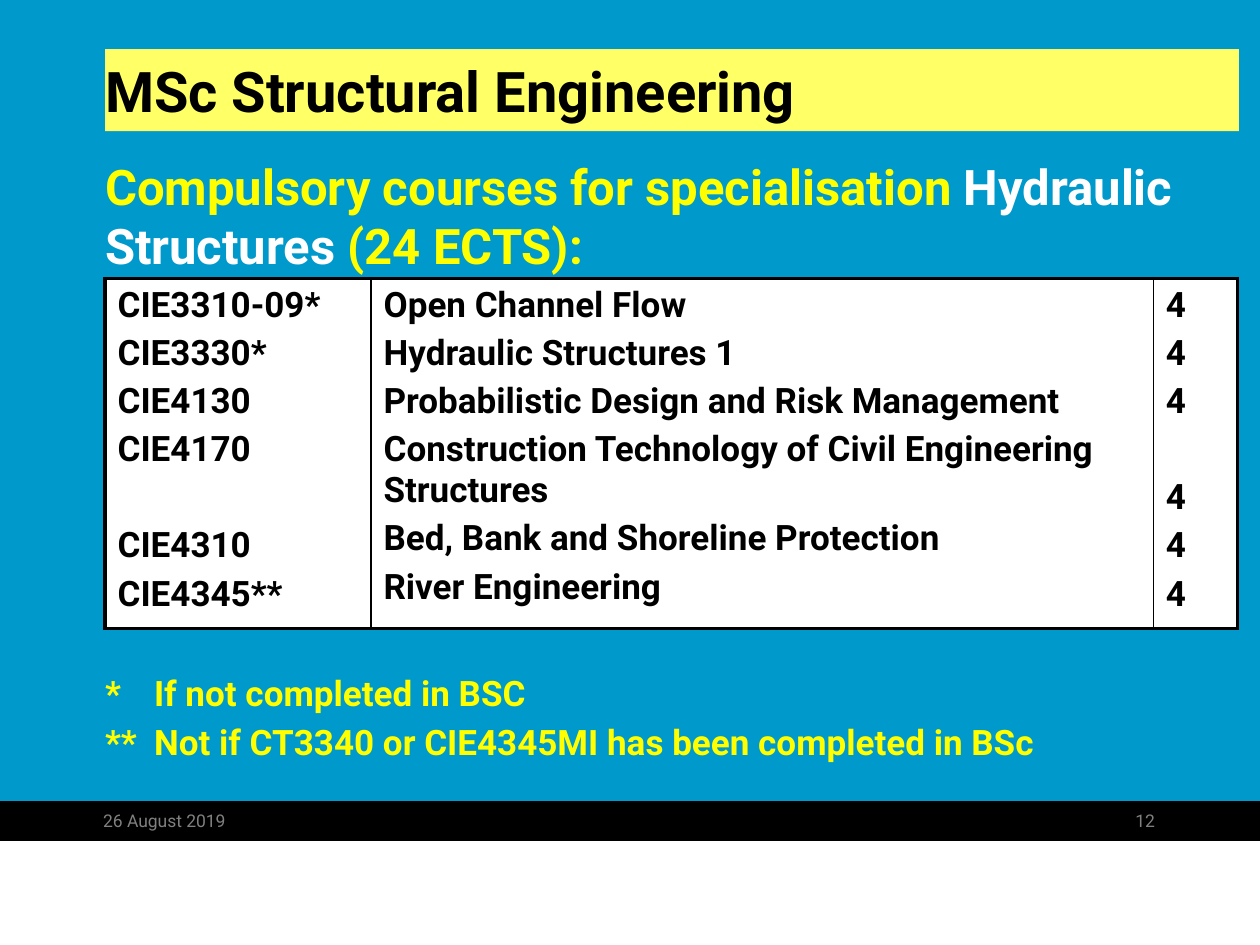
from dataclasses import dataclass

from lxml.etree import SubElement
from pptx import Presentation
from pptx.dml.color import RGBColor as RGB
from pptx.enum.shapes import MSO_SHAPE as Shape
from pptx.enum.text import MSO_ANCHOR as Anchor, MSO_AUTO_SIZE as AutoSize, PP_ALIGN as Align
from pptx.oxml.ns import qn
from pptx.util import Pt


@dataclass(frozen=True)
class Theme:
    font: str = "Roboto"
    background: str = "0099CC"
    banner: str = "FFFF66"
    accent: str = "FFFF00"
    dark: str = "000000"
    light: str = "FFFFFF"
    muted: str = "808080"
    title: int = 32
    heading: int = 28
    text: int = 20
    footer: int = 10


THEME = Theme()
LINE_GAP = 4
SKIPPED_LINE = 27.5
CODES = [("CIE3310-09*", 0), ("CIE3330*", 0), ("CIE4130", 0), ("CIE4170", 0),
         ("CIE4310", 1), ("CIE4345**", 0)]
COURSES = [("Open Channel Flow", 0), ("Hydraulic Structures 1", 0),
           ("Probabilistic Design and Risk Management", 0),
           ("Construction Technology of Civil Engineering Structures", 0),
           ("Bed, Bank and Shoreline Protection", 0), ("River Engineering", 0)]
CREDITS = [("4", 0), ("4", 0), ("4", 0), ("4", 1), ("4", 0), ("4", 0)]
COLUMNS = [(152, CODES), (447, COURSES), (48, CREDITS)]


def apply(target, values):
    for name, value in values.items():
        setattr(target, name, value)


def paint(fill, color):
    fill.solid()
    fill.fore_color.rgb = RGB.from_string(color)


def place(item, left, top, width, height):
    apply(item, {"left": Pt(left), "top": Pt(top), "width": Pt(width), "height": Pt(height)})


def format_frame(frame, anchor):
    apply(frame, {"margin_left": 0, "margin_right": 0, "margin_top": Pt(3.6),
                  "margin_bottom": Pt(3.6), "word_wrap": True,
                  "auto_size": AutoSize.NONE, "vertical_anchor": anchor})


def write(paragraph, pieces, size, bold=True, before=0, align=Align.LEFT):
    apply(paragraph, {"alignment": align, "space_before": Pt(before)})
    for words, color in pieces:
        run = paragraph.add_run()
        run.text = words
        apply(run.font, {"name": THEME.font, "size": Pt(size), "bold": bold})
        run.font.color.rgb = RGB.from_string(color)


def set_indent(paragraph, hanging=0):
    properties = paragraph._p.get_or_add_pPr()
    properties.set("marL", str(Pt(hanging)))
    properties.set("indent", str(-Pt(hanging)))
    SubElement(properties, qn("a:buNone"))


def add_strip(slide, top, height, color, outlined=False):
    strip = slide.shapes.add_shape(Shape.RECTANGLE, 0, Pt(top), Pt(720), Pt(height))
    strip.shadow.inherit = False
    paint(strip.fill, color)
    if outlined:
        paint(strip.line.fill, color)
        strip.line.width = Pt(0.75)
    else:
        strip.line.fill.background()


def add_footer_text(slide, left, words, align):
    box = slide.shapes.add_textbox(Pt(left), Pt(459.5), Pt(150), Pt(20))
    format_frame(box.text_frame, Anchor.TOP)
    write(box.text_frame.paragraphs[0], [(words, THEME.muted)], THEME.footer, False, align=align)


def fill_title(title):
    place(title, 60, 28, 648, 47)
    paint(title.fill, THEME.banner)
    format_frame(title.text_frame, Anchor.MIDDLE)
    write(title.text_frame.paragraphs[0], [("MSc Structural Engineering", THEME.dark)], THEME.title)


def fill_body(body):
    place(body, 60, 86, 644, 385)
    frame = body.text_frame
    format_frame(frame, Anchor.TOP)
    heading = frame.paragraphs[0]
    set_indent(heading)
    write(heading, [("Compulsory courses for specialisation ", THEME.accent),
                    ("Hydraulic Structures", THEME.light),
                    (" (24 ECTS):", THEME.accent)], THEME.heading)
    for words, before in [("*\tIf not completed in BSC", 227),
                          ("**\tNot if CT3340 or CIE4345MI has been completed in BSc", LINE_GAP)]:
        note = frame.add_paragraph()
        set_indent(note, 28)
        write(note, [(words, THEME.accent)], THEME.text, before=before)


def set_borders(cell, widths):
    properties = cell._tc.get_or_add_tcPr()
    for index, (side, width) in enumerate(widths.items()):
        border = SubElement(properties, qn(f"a:ln{side}"), w=str(Pt(width)))
        color = SubElement(SubElement(border, qn("a:solidFill")), qn("a:srgbClr"))
        color.set("val", THEME.dark)
        properties.insert(index, border)


def add_courses(slide):
    total = sum(width for width, entries in COLUMNS)
    frame = slide.shapes.add_table(1, len(COLUMNS), Pt(60), Pt(159), Pt(total), Pt(200))
    table = frame.table
    apply(table, {"first_row": False, "horz_banding": False})
    last = len(COLUMNS) - 1
    for index, (width, entries) in enumerate(COLUMNS):
        table.columns[index].width = Pt(width)
        cell = table.cell(0, index)
        paint(cell.fill, THEME.light)
        set_borders(cell, {"L": 1 if index else 2.25, "R": 2.25 if index == last else 1,
                           "T": 2.25, "B": 2.25})
        for row, (words, skipped) in enumerate(entries):
            text = cell.text_frame
            paragraph = text.add_paragraph() if row else text.paragraphs[0]
            before = LINE_GAP + skipped * SKIPPED_LINE if row else 0
            write(paragraph, [(words, THEME.dark)], THEME.text, before=before)


def main():
    deck = Presentation()
    apply(deck, {"slide_width": Pt(720), "slide_height": Pt(540)})
    slide = deck.slides.add_slide(deck.slide_layouts[1])
    paint(slide.background.fill, THEME.background)
    add_strip(slide, 480, 60, THEME.light)
    add_strip(slide, 458, 22, THEME.dark, outlined=True)
    add_footer_text(slide, 59, "26 August 2019", Align.LEFT)
    add_footer_text(slide, 510, "12", Align.RIGHT)
    fill_title(slide.shapes.title)
    fill_body(slide.placeholders[1])
    add_courses(slide)
    deck.save("out.pptx")


if __name__ == "__main__":
    main()
